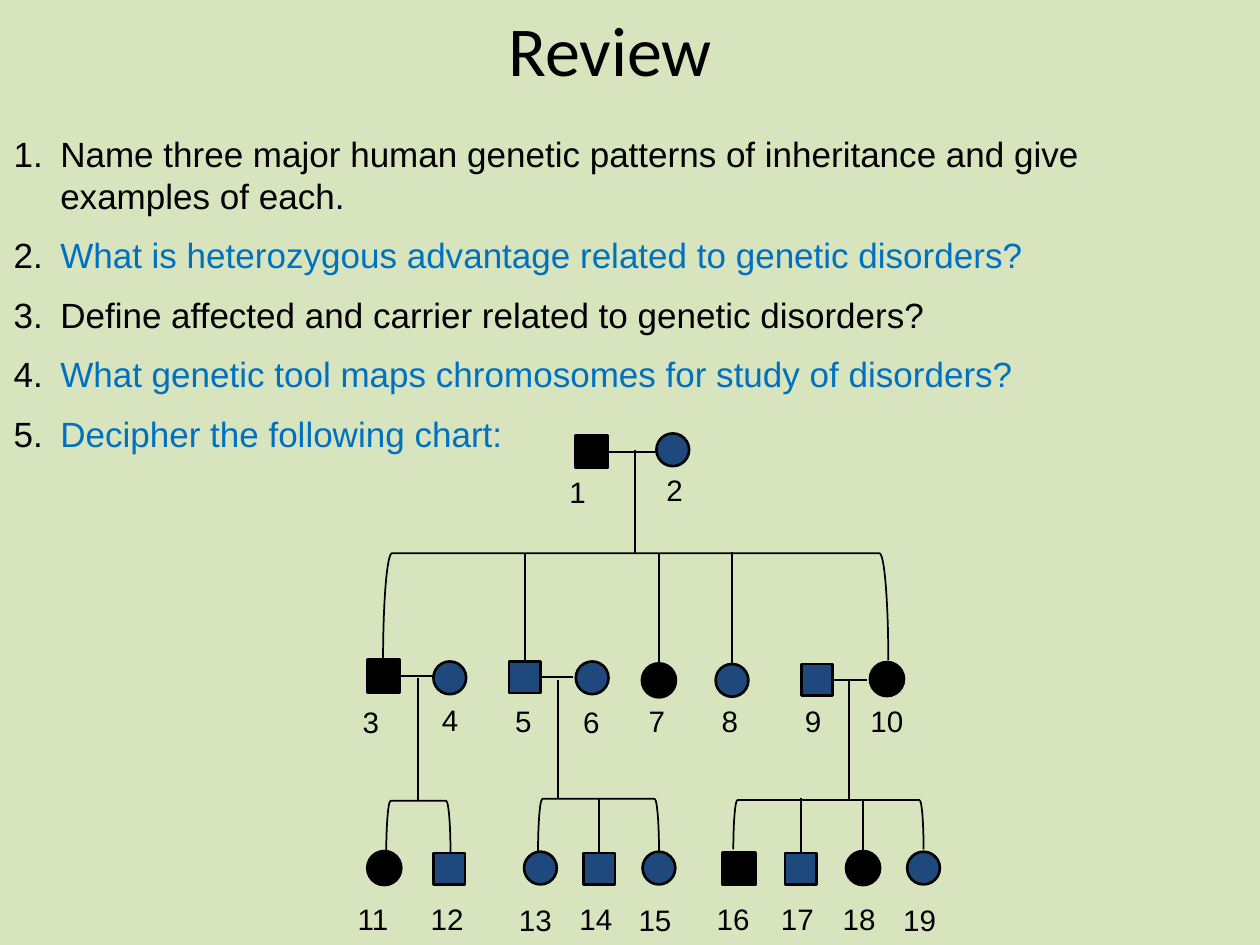
from lxml.etree import SubElement
from pptx import Presentation
from pptx.dml.color import RGBColor
from pptx.enum.shapes import MSO_CONNECTOR, MSO_SHAPE
from pptx.enum.text import MSO_AUTO_SIZE, PP_ALIGN
from pptx.oxml.ns import qn
from pptx.util import Inches, Pt

BLACK, BLUE, NAVY = "000000", "0070C0", "1F497D"
SQUARE_SIZE, CIRCLE_SIZE = 0.25, 0.26

deck = Presentation()
deck.slide_width, deck.slide_height = Inches(10), Inches(7.5)
slide = deck.slides.add_slide(deck.slide_layouts[6])
slide.background.fill.solid()
slide.background.fill.fore_color.rgb = RGBColor.from_string("D7E4BD")


def add_text(left, top, width, height, lines, size, font, wrap=True):
    frame = slide.shapes.add_textbox(
        Inches(left), Inches(top), Inches(width), Inches(height)).text_frame
    frame.word_wrap = wrap
    frame.auto_size = MSO_AUTO_SIZE.SHAPE_TO_FIT_TEXT
    for index, (words, color) in enumerate(lines):
        paragraph = frame.add_paragraph() if index else frame.paragraphs[0]
        run = paragraph.add_run()
        run.text = words
        run.font.size = Pt(size)
        run.font.name = font
        run.font.color.rgb = RGBColor.from_string(color)
    return frame


def add_line(x1, y1, x2, y2):
    line = slide.shapes.add_connector(
        MSO_CONNECTOR.STRAIGHT, Inches(x1), Inches(y1), Inches(x2), Inches(y2))
    line.line.color.rgb = RGBColor.from_string(BLACK)
    line.line.width = Pt(1)
    SubElement(line._element.spPr, qn("a:effectLst"))
    return line


title = add_text(1.13, 0, 7.43, 0.77, [("Review", BLACK)], 40, "Calibri")
title.paragraphs[0].alignment = PP_ALIGN.CENTER

questions = [
    ("Name three major human genetic patterns of inheritance and give examples of each.", BLACK),
    ("What is heterozygous advantage related to genetic disorders?", BLUE),
    ("Define affected and carrier related to genetic disorders?", BLACK),
    ("What genetic tool maps chromosomes for study of disorders?", BLUE),
    ("Decipher the following chart:", BLUE),
]
question_list = add_text(0, 1, 9.91, 2.79, questions, 20, "Arial")
for question in question_list.paragraphs:
    properties = question._p.get_or_add_pPr()
    properties.set("marL", str(Inches(0.38)))
    properties.set("indent", str(Inches(-0.37)))
    spacing = SubElement(properties, qn("a:spcBef"))
    SubElement(spacing, qn("a:spcPct"), val="50000")
    number_color = SubElement(properties, qn("a:buClr"))
    SubElement(number_color, qn("a:srgbClr"), val=BLACK)
    SubElement(properties, qn("a:buFont"), typeface="Arial")
    SubElement(properties, qn("a:buAutoNum"), type="arabicPeriod")

people = [
    (1, "male", True, 4.57, 3.46, 4.42, 3.71),
    (2, "female", False, 5.21, 3.44, 5.19, 3.7),
    (3, "male", True, 2.92, 5.24, 2.78, 5.54),
    (4, "female", False, 3.44, 5.25, 3.41, 5.52),
    (5, "male", False, 4.04, 5.25, 3.99, 5.53),
    (6, "female", False, 4.57, 5.25, 4.53, 5.54),
    (7, "female", True, 5.1, 5.27, 5.05, 5.53),
    (8, "female", False, 5.68, 5.27, 5.63, 5.53),
    (9, "male", False, 6.36, 5.27, 6.29, 5.53),
    (10, "female", True, 6.91, 5.26, 6.81, 5.53),
    (11, "female", True, 2.92, 6.76, 2.74, 7.1),
    (12, "male", False, 3.44, 6.77, 3.32, 7.1),
    (13, "female", False, 4.16, 6.76, 4.02, 7.11),
    (14, "male", False, 4.63, 6.77, 4.5, 7.1),
    (15, "female", False, 5.1, 6.76, 4.97, 7.11),
    (16, "male", True, 5.74, 6.77, 5.59, 7.1),
    (17, "male", False, 6.23, 6.77, 6.1, 7.1),
    (18, "female", True, 6.72, 6.76, 6.59, 7.1),
    (19, "female", False, 7.2, 6.76, 7.07, 7.11),
]
symbols, places = {}, {}
for number, sex, affected, left, top, label_left, label_top in people:
    size = SQUARE_SIZE if sex == "male" else CIRCLE_SIZE
    outline = MSO_SHAPE.RECTANGLE if sex == "male" else MSO_SHAPE.OVAL
    symbol = slide.shapes.add_shape(
        outline, Inches(left), Inches(top), Inches(size), Inches(size))
    symbol.shadow.inherit = False
    symbol.fill.solid()
    symbol.fill.fore_color.rgb = RGBColor.from_string(BLACK if affected else NAVY)
    symbol.line.color.rgb = RGBColor.from_string(BLACK)
    symbol.line.width = Pt(2.25 if affected else 1.5)
    symbols[number], places[number] = symbol, (left, top, size)
    add_text(label_left, label_top, 0.46 if number > 9 else 0.33, 0.39,
             [(str(number), BLACK)], 16.9, "Arial", wrap=False)

sibling_brackets = [
    (4.62, 2.81, 0.85, 4.01),
    (6.38, 5.79, 0.39, 1.51),
    (4.54, 6.07, 0.42, 0.96),
    (3.11, 6.31, 0.42, 0.51),
]
for left, top, width, height in sibling_brackets:
    bracket = slide.shapes.add_shape(
        MSO_SHAPE.LEFT_BRACKET, Inches(left), Inches(top), Inches(width), Inches(height))
    bracket.rotation = 90
    bracket.adjustments[0] = 0.083
    bracket.shadow.inherit = False
    bracket.fill.background()
    bracket.line.color.rgb = RGBColor.from_string(BLACK)
    bracket.line.width = Pt(1)

couples = [
    (1, 5.21, 5.04, 3.57, 4.39),
    (3, 3.44, 3.32, 5.38, 6.36),
    (5, 4.55, 4.43, 5.4, 6.33),
    (9, 6.88, 6.74, 5.4, 6.34),
]
for father, mother_side, descent_x, descent_top, descent_bottom in couples:
    left, top, size = places[father]
    middle = top + size / 2
    marriage = add_line(left + size, middle, mother_side, middle)
    marriage.begin_connect(symbols[father], 3)
    add_line(descent_x, descent_top, descent_x, descent_bottom)

middle_children = [(5, 4.39), (7, 4.39), (8, 4.38), (14, 6.34), (17, 6.33), (18, 6.36)]
for child, branch_top in middle_children:
    left, top, size = places[child]
    center = left + size / 2
    branch = add_line(center, branch_top, center, top)
    branch.end_connect(symbols[child], 0)

deck.save("out.pptx")
